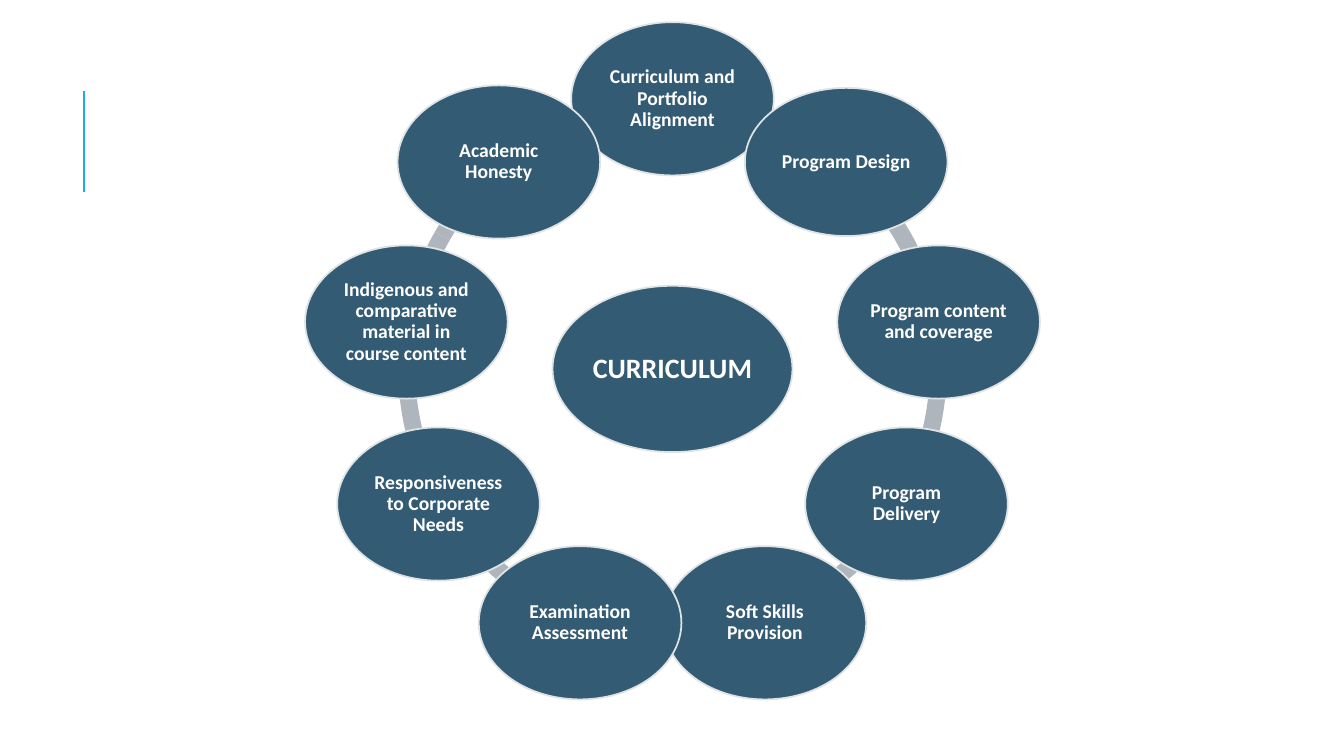
from math import cos, radians, sin

from lxml import etree
from pptx import Presentation
from pptx.dml.color import RGBColor
from pptx.enum.shapes import MSO_CONNECTOR, MSO_SHAPE
from pptx.enum.text import MSO_ANCHOR, PP_ALIGN
from pptx.oxml.ns import qn
from pptx.util import Inches, Pt

OVAL = MSO_SHAPE.OVAL
BLOCK_ARC = MSO_SHAPE.BLOCK_ARC
STRAIGHT = MSO_CONNECTOR.STRAIGHT
MIDDLE = MSO_ANCHOR.MIDDLE
CENTER = PP_ALIGN.CENTER

COLORS = {
    "accent": "1CADE4",
    "ring": "AEB5BC",
    "topic": "335B74",
    "outline": "DFE3E5",
    "text": "FFFFFF",
}
FONT = "Calibri"

CENTER_X, CENTER_Y = 6.67, 3.66
RING_SIZE = 5.44
RING_THICKNESS = 0.031
TOPIC_RADIUS = 2.68
TOPIC_WIDTH, TOPIC_HEIGHT = 2.01, 1.52

TOPICS = [
    ("Curriculum and Portfolio Alignment", TOPIC_HEIGHT),
    ("Program Design", 1.47),
    ("Program content and coverage", TOPIC_HEIGHT),
    ("Program Delivery", TOPIC_HEIGHT),
    ("Soft Skills Provision", TOPIC_HEIGHT),
    ("Examination Assessment", TOPIC_HEIGHT),
    ("Responsiveness to Corporate Needs", TOPIC_HEIGHT),
    ("Indigenous and comparative material in course content", TOPIC_HEIGHT),
    ("Academic Honesty", TOPIC_HEIGHT),
]


def add_centered(kind, x, y, width, height, fill):
    """Add a filled shape whose middle is at x, y."""
    shape = page.shapes.add_shape(
        kind, Inches(x - width / 2), Inches(y - height / 2), Inches(width), Inches(height)
    )
    shape.shadow.inherit = False
    shape.fill.solid()
    shape.fill.fore_color.rgb = RGBColor.from_string(COLORS[fill])
    shape.line.fill.background()
    return shape


def add_topic(text, *, x, y, width, height, size=14, inset=0.02):
    oval = add_centered(OVAL, x, y, width, height, "topic")
    oval.line.color.rgb = RGBColor.from_string(COLORS["outline"])
    oval.line.width = Pt(1.25)
    frame = oval.text_frame
    frame.word_wrap = True
    frame.vertical_anchor = MIDDLE
    frame.margin_left = frame.margin_right = Inches(inset)
    frame.margin_top = frame.margin_bottom = Inches(inset)
    para = frame.paragraphs[0]
    para.alignment = CENTER
    para.line_spacing = 0.9
    span = para.add_run()
    span.text = text
    span.font.name = FONT
    span.font.size = Pt(size)
    span.font.bold = True
    span.font.color.rgb = RGBColor.from_string(COLORS["text"])


deck = Presentation()
deck.slide_width = Inches(13.33)
deck.slide_height = Inches(7.5)
page = deck.slides.add_slide(deck.slide_layouts[6])

# Accent line at the left
accent = page.shapes.add_connector(
    STRAIGHT, Inches(0.83), Inches(1.9), Inches(0.83), Inches(0.9)
)
accent.line.color.rgb = RGBColor.from_string(COLORS["accent"])
accent.line.width = Pt(1.5)
etree.SubElement(accent._element.spPr, qn("a:effectLst"))

# Ring: eight arcs of 24 degrees, and one over the top that closes the circle
bounds = list(range(18, 211, 24))
for start, end in zip(bounds, bounds[1:] + bounds[:1]):
    arc = add_centered(BLOCK_ARC, CENTER_X, CENTER_Y, RING_SIZE, RING_SIZE, "ring")
    # Angles are stored in 60000ths of a degree, adjustments in 100000ths
    arc.adjustments[0] = start * 0.6
    arc.adjustments[1] = end * 0.6
    arc.adjustments[2] = RING_THICKNESS

# Hub, then the topics clockwise from the top
add_topic("CURRICULUM", x=CENTER_X, y=CENTER_Y, width=2.38, height=1.65, size=20, inset=0.03)
for index, (topic, height) in enumerate(TOPICS):
    angle = radians(index * 360 / len(TOPICS))
    add_topic(
        topic,
        x=CENTER_X + TOPIC_RADIUS * sin(angle),
        y=CENTER_Y - TOPIC_RADIUS * cos(angle),
        width=TOPIC_WIDTH,
        height=height,
    )

deck.save("out.pptx")
